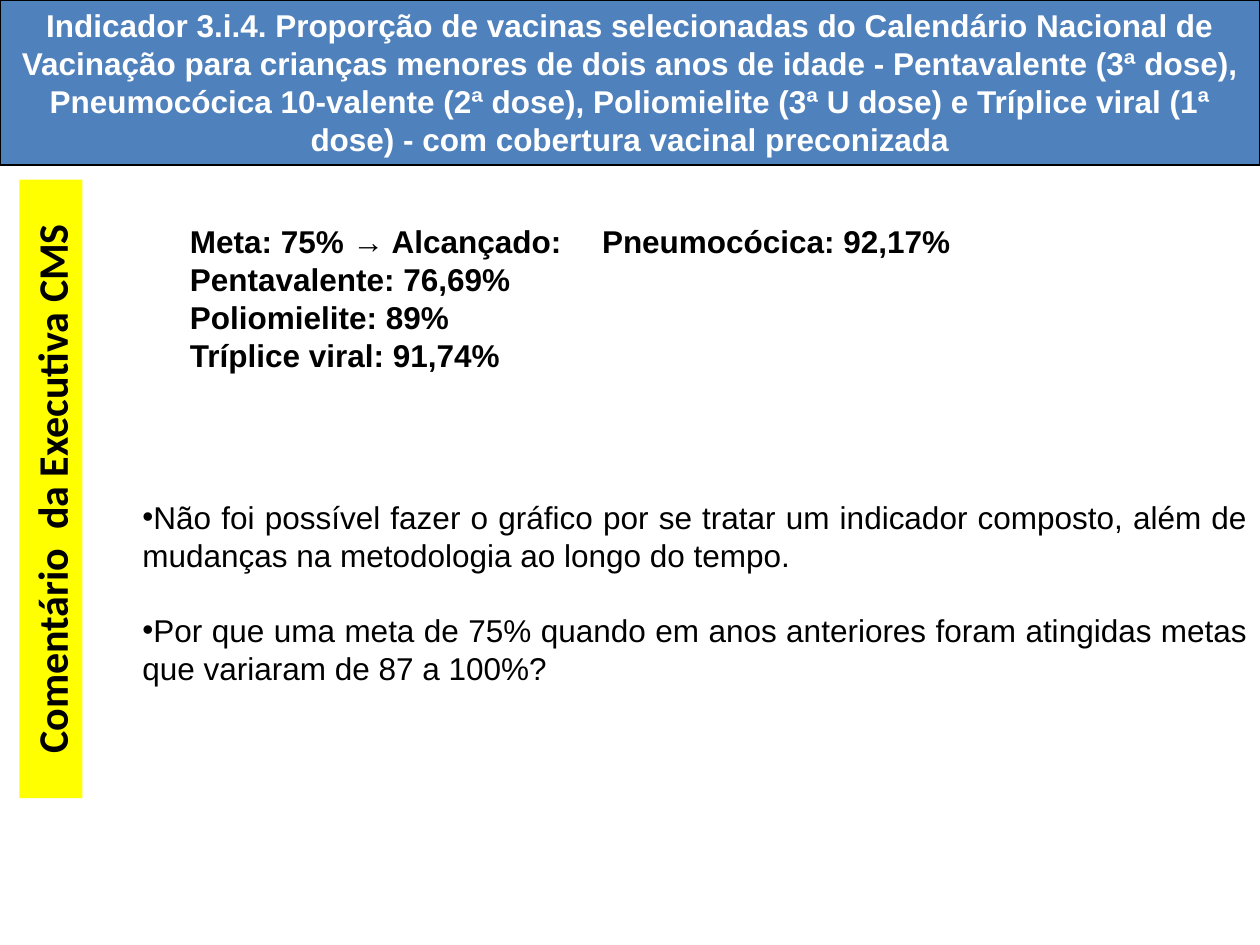
"""Build the slide on indicator 3.i.4, vaccination coverage of children under two."""
import pptx
import pptx.dml.color
import pptx.enum.shapes
import pptx.enum.text
import pptx.util

Inches, Pt = pptx.util.Inches, pptx.util.Pt
ALIGN, ANCHOR = pptx.enum.text.PP_ALIGN, pptx.enum.text.MSO_ANCHOR


def color(value):
    """Turn a hex string into a colour."""
    return pptx.dml.color.RGBColor.from_string(value)


def write(shape, lines, font, align, frame, spacing=0, indent=0):
    """Fill a shape with formatted paragraphs."""
    text_frame = shape.text_frame
    text_frame.text = "\n".join(lines)
    text_frame.auto_size = pptx.enum.text.MSO_AUTO_SIZE.NONE
    for name, value in frame.items():
        setattr(text_frame, name, value)
    for number, paragraph in enumerate(text_frame.paragraphs, start=1):
        paragraph.alignment = align
        paragraph.space_before = Pt(0)
        paragraph.space_after = Pt(spacing if number < len(lines) else 0)
        properties = paragraph._p.get_or_add_pPr()
        properties.set("marL", "0")
        properties.set("indent", str(Inches(indent)))
        for run in paragraph.runs:
            for name, value in font.items():
                if name == "color":
                    run.font.color.rgb = color(value)
                else:
                    setattr(run.font, name, value)


presentation = pptx.Presentation()
presentation.slide_width, presentation.slide_height = Inches(10), Inches(7.5)
slide = presentation.slides.add_slide(presentation.slide_layouts[1])
title, comments = slide.placeholders
results = slide.shapes.add_textbox(0, 0, 0, 0)
label = slide.shapes.add_shape(pptx.enum.shapes.MSO_SHAPE.RECTANGLE, 0, 0, 0, 0)

boxes = [
    (title, 0, 0, 10, 1.31),
    (results, 1.18, 1.71, 7.03, 1.31),
    (comments, 1.03, 3.89, 8.97, 1.62),
    (label, -2.05, 3.63, 4.91, 0.5),
]
for shape, *box in boxes:
    shape.left, shape.top, shape.width, shape.height = map(Inches, box)

for shape, fill in ((title, "4F81BD"), (label, "FFFF00")):
    shape.fill.solid()
    shape.fill.fore_color.rgb = color(fill)
title.line.color.rgb = color("000000")
title.line.width = Pt(0.75)
label.line.fill.background()
label.shadow.inherit = False
label.rotation = 270

body_font = {"name": "Arial", "size": Pt(18), "bold": False, "color": "000000"}
bold_font = {**body_font, "bold": True}
middle = {"word_wrap": True, "vertical_anchor": ANCHOR.MIDDLE}
top = {"word_wrap": True, "vertical_anchor": ANCHOR.TOP}

write(
    title,
    [
        "Indicador 3.i.4. Proporção de vacinas selecionadas do Calendário Nacional de "
        "Vacinação para crianças menores de dois anos de idade - Pentavalente (3ª dose), "
        "Pneumocócica 10-valente (2ª dose), Poliomielite (3ª U dose) e Tríplice viral "
        "(1ª dose) - com cobertura vacinal preconizada"
    ],
    {**bold_font, "color": "FFFFFF"}, ALIGN.CENTER, top,
)
write(
    results,
    [
        "Meta: 75% → Alcançado: \tPneumocócica: 92,17%",
        "Pentavalente: 76,69%",
        "Poliomielite: 89%",
        "Tríplice viral: 91,74%",
    ],
    bold_font, ALIGN.LEFT, middle, indent=0.23,
)
write(
    comments,
    [
        "Não foi possível fazer o gráfico por se tratar um indicador composto, "
        "além de mudanças na metodologia ao longo do tempo.",
        "Por que uma meta de 75% quando em anos anteriores foram atingidas metas "
        "que variaram de 87 a 100%?",
    ],
    body_font, ALIGN.JUSTIFY, middle, spacing=21.5,
)
write(
    label,
    ["Comentário  da Executiva CMS"],
    {**bold_font, "name": "Calibri", "size": Pt(24)}, ALIGN.CENTER, top,
)

presentation.save("out.pptx")
